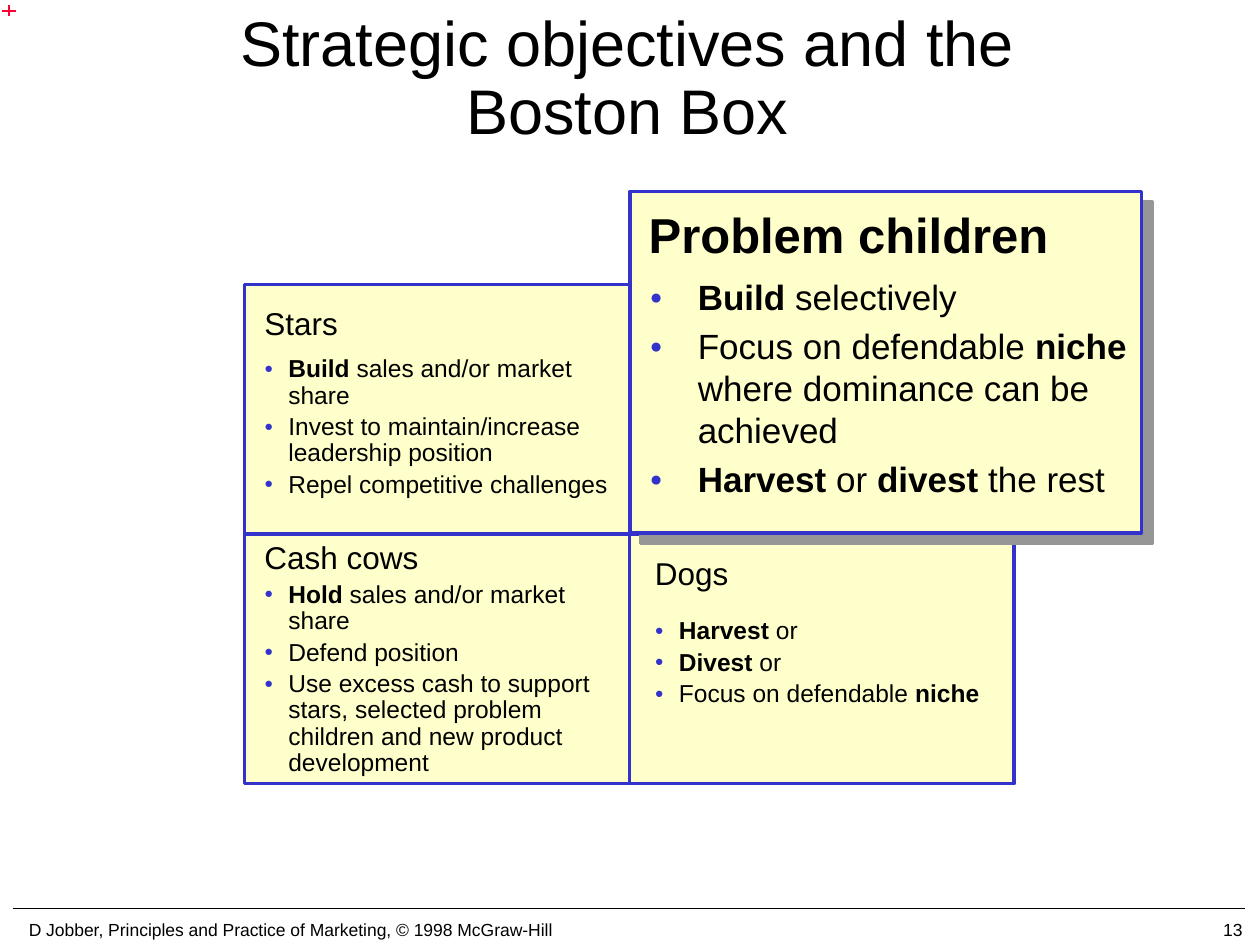
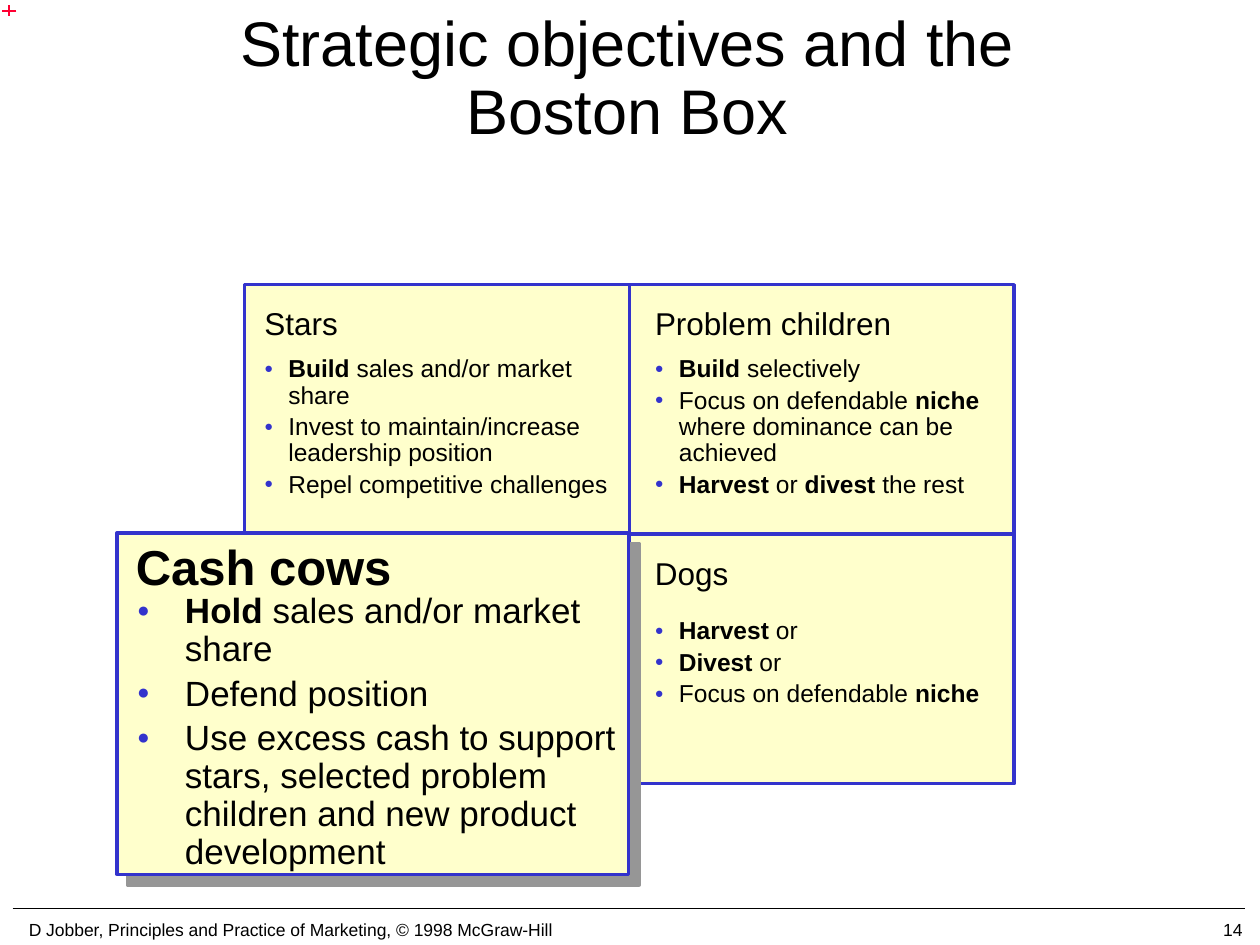
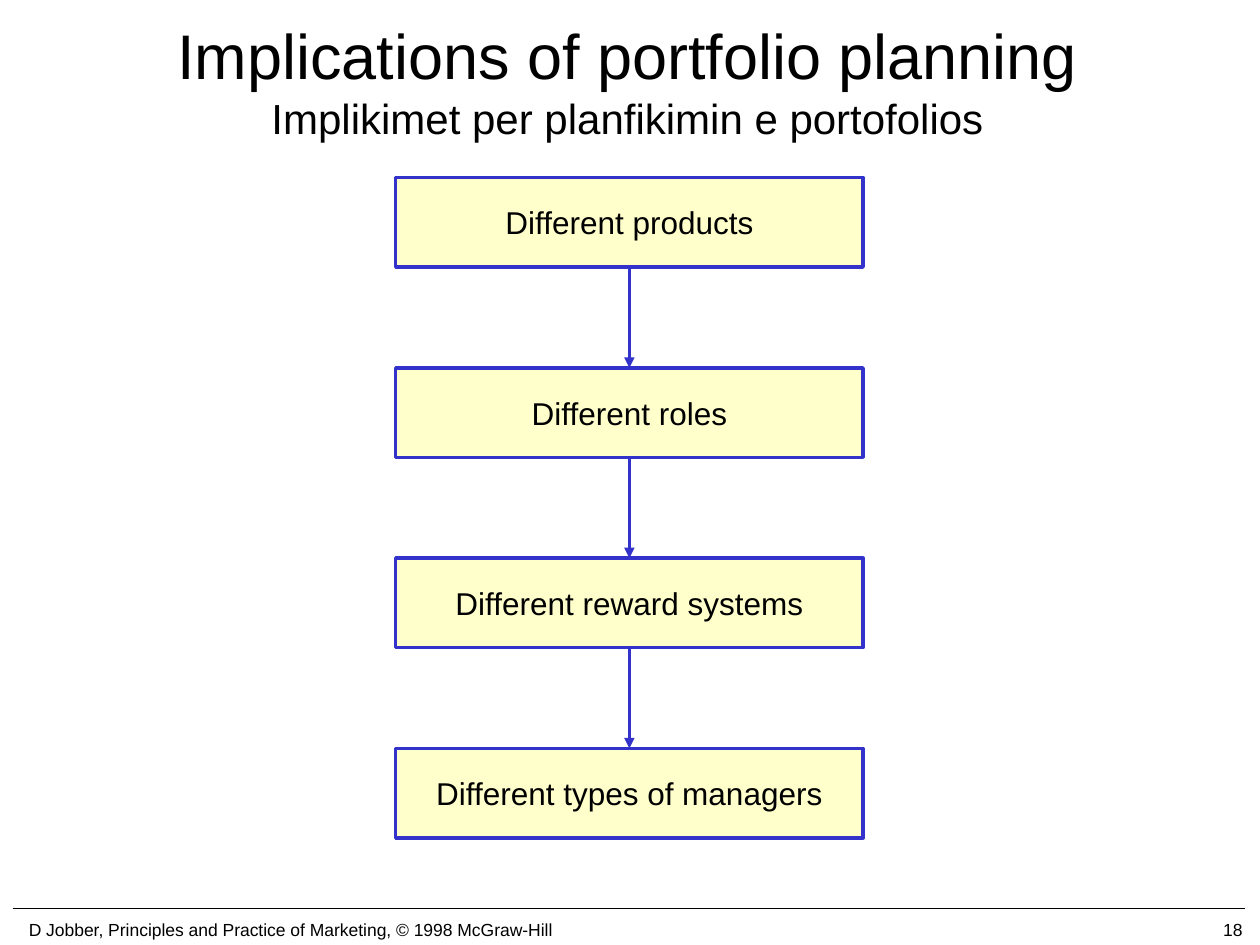
import dataclasses

import pptx
import pptx.dml.color
import pptx.enum.shapes
import pptx.enum.text
import pptx.oxml.ns
import pptx.util
from lxml import etree

Inches = pptx.util.Inches
Pt = pptx.util.Pt
qn = pptx.oxml.ns.qn
ALIGN = pptx.enum.text.PP_ALIGN
ANCHOR = pptx.enum.text.MSO_ANCHOR


@dataclasses.dataclass(frozen=True)
class Theme:
    font: str = "Arial"
    ink: str = "000000"
    accent: str = "3333CC"
    panel: str = "FFFFCC"
    shade: str = "969696"
    mark: str = "FF0033"
    title: int = 36
    subtitle: int = 24
    spotlight: int = 28
    spotlight_list: int = 20
    heading: int = 18
    list: int = 14
    footer: int = 10


THEME = Theme()
FOOTER = "D Jobber, Principles and Practice of Marketing, © 1998 McGraw-Hill"
BOSTON_TITLE = [("Strategic objectives and the", THEME.title), ("Boston Box", THEME.title)]
LEFT, RIGHT = 2, 5.1


@dataclasses.dataclass(frozen=True)
class Quadrant:
    name: str
    points: tuple
    left: float
    heading_top: float
    heading_width: float
    list_top: float
    list_width: float
    list_height: float


STARS = Quadrant(
    "Stars",
    ("*Build* sales and/or market share",
     "Invest to maintain/increase leadership position",
     "Repel competitive challenges"),
    LEFT, 2.36, 0.8, 2.78, 3.1, 1.26)
PROBLEMS = Quadrant(
    "Problem children",
    ("*Build* selectively",
     "Focus on defendable *niche* where dominance can be achieved",
     "*Harvest* or *divest* the rest"),
    RIGHT, 2.36, 2.09, 2.78, 3.1, 1.26)
COWS = Quadrant(
    "Cash cows",
    ("*Hold* sales and/or market share",
     "Defend position",
     "Use excess cash to support stars, selected problem children and new product development"),
    LEFT, 4.22, 1.43, 4.57, 2.85, 1.68)
DOGS = Quadrant(
    "Dogs",
    ("*Harvest* or", "*Divest* or", "Focus on defendable *niche*"),
    RIGHT, 4.35, 0.8, 4.86, 3.1, 0.84)


def rgb(value):
    return pptx.dml.color.RGBColor.from_string(value)


def child(parent, tag, **attributes):
    return etree.SubElement(parent, qn(tag), attributes)


def write(para, text, size=THEME.heading, bold=False, color=THEME.ink,
          align=ALIGN.LEFT, spacing=1.0):
    para.alignment = align
    para.line_spacing = spacing
    for index, part in enumerate(text.split("*")):
        if part:
            span = para.add_run()
            span.text = part
            span.font.name = THEME.font
            span.font.size = Pt(size)
            span.font.bold = bold or index % 2 == 1
            span.font.color.rgb = rgb(color)


class Page:
    def __init__(self, deck, title, number, spacing=1.0):
        self.theme = THEME
        self.slide = deck.slides.add_slide(deck.slide_layouts[5])
        self.shapes = self.slide.shapes
        self.title(title, spacing)
        self.line((0.1, 7.21), (9.88, 7.21), self.theme.ink, 1)
        for text, left, width, align in ((str(number), 7.88, 2.08, ALIGN.RIGHT),
                                         (FOOTER, 0, 4.61, ALIGN.CENTER)):
            self.text(text, left, 7.25, width, 0.25, anchor=ANCHOR.MIDDLE,
                      size=self.theme.footer, align=align)

    def title(self, lines, spacing):
        box = self.shapes.title
        box.left, box.top, box.width, box.height = map(Inches, (0.73, 0.01, 8.5, 1.25))
        frame = self.prepare(box.text_frame, True, ANCHOR.MIDDLE)
        para = frame.paragraphs[0]
        for index, (text, size) in enumerate(lines):
            if index:
                para.add_line_break()
                child(para._p[-1], "a:rPr", sz=str(size * 100))
            write(para, text, size=size, align=ALIGN.CENTER, spacing=spacing)

    def prepare(self, frame, wrap, anchor):
        frame.word_wrap = wrap
        frame.auto_size = pptx.enum.text.MSO_AUTO_SIZE.NONE
        frame.vertical_anchor = anchor
        frame.margin_left = frame.margin_right = Inches(0.1)
        frame.margin_top = frame.margin_bottom = Inches(0.05)
        return frame

    def frame(self, left, top, width, height, wrap, anchor=ANCHOR.TOP):
        box = self.shapes.add_textbox(*map(Inches, (left, top, width, height)))
        return self.prepare(box.text_frame, wrap, anchor)

    def text(self, text, left, top, width, height, anchor=ANCHOR.TOP, **style):
        frame = self.frame(left, top, width, height, False, anchor)
        write(frame.paragraphs[0], text, **style)

    def bullets(self, points, left, top, width, height, size, indent, spacing):
        frame = self.frame(left, top, width, height, True)
        for index, point in enumerate(points):
            para = frame.add_paragraph() if index else frame.paragraphs[0]
            layout = para._p.get_or_add_pPr()
            layout.set("marL", str(Inches(indent)))
            layout.set("indent", str(-Inches(indent)))
            child(child(layout, "a:buClr"), "a:srgbClr", val=self.theme.accent)
            child(layout, "a:buSzPct", val="60000")
            child(layout, "a:buFont", typeface=self.theme.font)
            child(layout, "a:buChar", char="●")
            para.space_before = Pt(0.2 * size if index else 0)
            write(para, point, size=size, spacing=spacing)

    def panel(self, left, top, width, height, text="", shadow=False):
        box = self.shapes.add_shape(pptx.enum.shapes.MSO_SHAPE.RECTANGLE,
                                    *map(Inches, (left, top, width, height)))
        box.shadow.inherit = False
        box.fill.solid()
        box.fill.fore_color.rgb = rgb(self.theme.panel)
        box.line.color.rgb = rgb(self.theme.accent)
        box.line.width = Pt(2)
        if shadow:
            effects = box._element.spPr.find(qn("a:effectLst"))
            cast = child(effects, "a:outerShdw", dist=str(Pt(8.5)), dir="2700000",
                         algn="ctr", rotWithShape="0")
            child(cast, "a:srgbClr", val=self.theme.shade)
        if text:
            frame = self.prepare(box.text_frame, True, ANCHOR.MIDDLE)
            write(frame.paragraphs[0], text, align=ALIGN.CENTER)
        return box

    def line(self, start, end, color, width):
        line = self.shapes.add_connector(pptx.enum.shapes.MSO_CONNECTOR.STRAIGHT,
                                         *map(Inches, start + end))
        line.line.color.rgb = rgb(color)
        line.line.width = Pt(width)
        child(line._element.spPr, "a:effectLst")
        return line

    def join(self, first, first_side, second, second_side, arrow=False):
        line = self.line((0, 0), (0, 0), self.theme.accent, 2)
        line.begin_connect(first, first_side)
        line.end_connect(second, second_side)
        if arrow:
            child(line.line._get_or_add_ln(), "a:tailEnd", type="triangle")

    def matrix(self):
        box = self.panel(1.94, 2.26, 6.11, 3.96)
        self.join(box, 1, box, 3)
        self.join(box, 0, box, 2)

    def quadrant(self, item):
        self.bullets(item.points, item.left, item.list_top, item.list_width,
                     item.list_height, self.theme.list, 0.19, 0.9)
        self.text(item.name, item.left, item.heading_top, item.heading_width, 0.41)

    def spotlight(self, item, left, top, heading_top, heading_width,
                  list_top, list_height, spacing):
        self.panel(left, top, 4.06, 2.71, shadow=True)
        self.bullets(item.points, left + 0.06, list_top, 4.04, list_height,
                     self.theme.spotlight_list, 0.38, spacing)
        self.text(item.name, left + 0.05, heading_top, heading_width, 0.58,
                  size=self.theme.spotlight, bold=True)

    def corner_mark(self):
        self.line((0.07, 0.04), (0.07, 0.13), self.theme.mark, 1)
        self.line((0.13, 0.09), (0.02, 0.09), self.theme.mark, 1)


def boston_page(deck, number, quadrants, **spotlight):
    page = Page(deck, BOSTON_TITLE, number, spacing=0.9)
    page.matrix()
    page.spotlight(**spotlight)
    for item in quadrants:
        page.quadrant(item)
    page.corner_mark()


def implications_page(deck):
    page = Page(deck, [("Implications of portfolio planning", THEME.title),
                       ("Implikimet per planfikimin e portofolios", THEME.subtitle)], 18)
    steps = ("Different products", "Different roles",
             "Different reward systems", "Different types of managers")
    boxes = [page.panel(3.14, 1.41 + 1.51 * row, 3.71, 0.71, step)
             for row, step in enumerate(steps)]
    for upper, lower in zip(boxes, boxes[1:]):
        page.join(upper, 2, lower, 0, arrow=True)


def main():
    deck = pptx.Presentation()
    deck.slide_width, deck.slide_height = Inches(10), Inches(7.5)
    boston_page(deck, 13, (DOGS, STARS, COWS), item=PROBLEMS, left=5, top=1.52,
                heading_top=1.57, heading_width=3.39,
                list_top=2.14, list_height=2.03, spacing=1.0)
    boston_page(deck, 14, (PROBLEMS, DOGS, STARS), item=COWS, left=0.93, top=4.23,
                heading_top=4.21, heading_width=2.25,
                list_top=4.66, list_height=2.24, spacing=0.9)
    implications_page(deck)
    deck.save("out.pptx")


if __name__ == "__main__":
    main()
